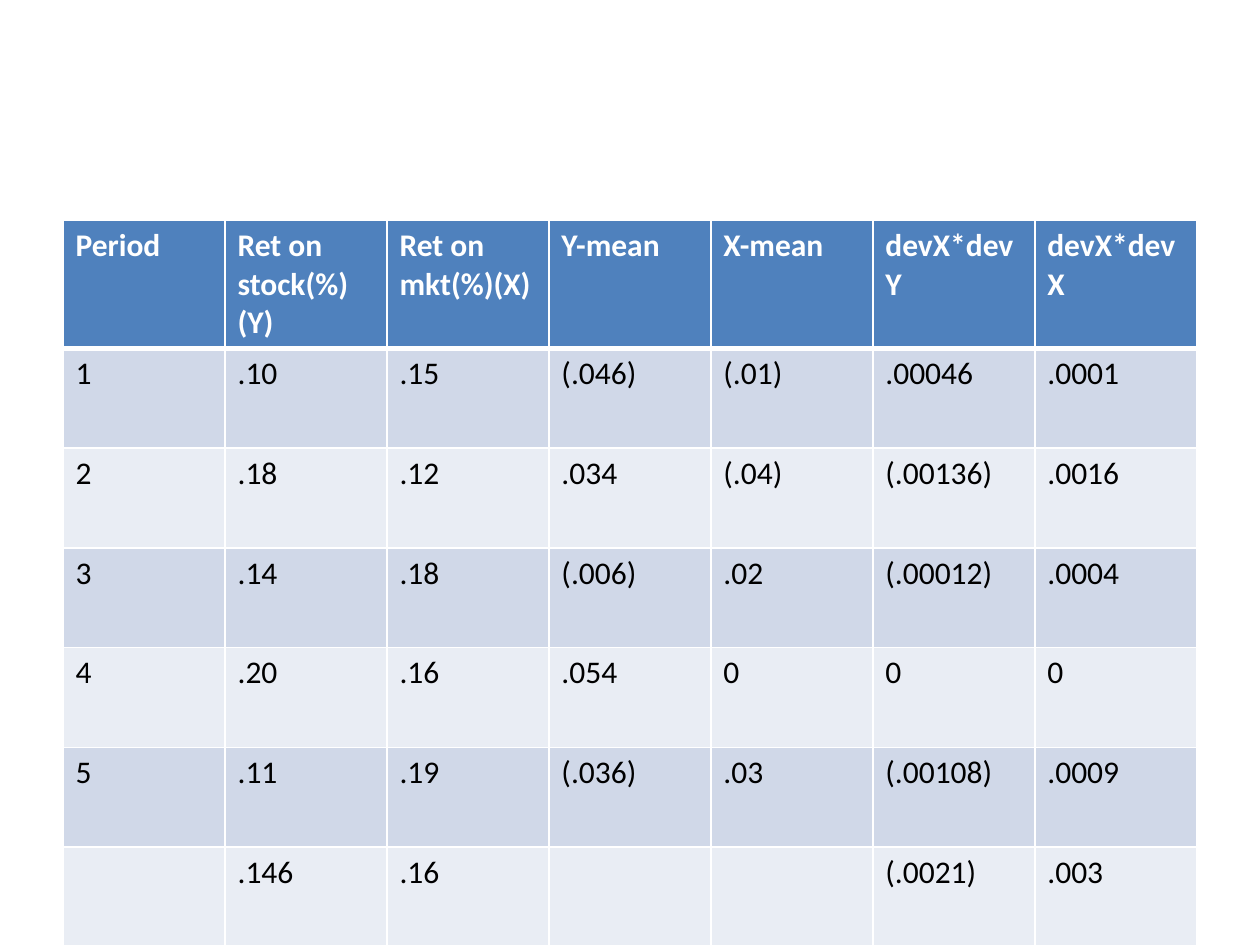
"""Build a slide with a table of stock and market return deviations."""
from lxml.etree import SubElement
from pptx import Presentation
from pptx.dml.color import RGBColor
from pptx.oxml.ns import qn
from pptx.util import Pt

WHITE = RGBColor(0xFF, 0xFF, 0xFF)
BLACK = RGBColor(0x00, 0x00, 0x00)
HEADER_BLUE = RGBColor(0x4F, 0x81, 0xBD)
BAND_DARK = RGBColor(0xD0, 0xD8, 0xE8)
BAND_LIGHT = RGBColor(0xE9, 0xED, 0xF4)

HEADINGS = ["Period", "Ret on stock(%)(Y)", "Ret on mkt(%)(X)", "Y-mean",
            "X-mean", "devX*devY", "devX*devX"]
RETURNS = [
    ["1", ".10", ".15", "(.046)", "(.01)", ".00046", ".0001"],
    ["2", ".18", ".12", ".034", "(.04)", "(.00136)", ".0016"],
    ["3", ".14", ".18", "(.006)", ".02", "(.00012)", ".0004"],
    ["4", ".20", ".16", ".054", "0", "0", "0"],
    ["5", ".11", ".19", "(.036)", ".03", "(.00108)", ".0009"],
    ["", ".146", ".16", "", "", "(.0021)", ".003"],
]


class SlideBuilder:
    """Hold the text style and the current slide."""

    header_format = {"name": "Calibri", "size": Pt(18), "bold": True}
    body_format = {**header_format, "bold": False}

    def __init__(self, slide):
        self.slide = slide

    def borders(self, cell, widths):
        """Draw white cell borders with the given widths in points."""
        properties = cell._tc.get_or_add_tcPr()
        for side, width in widths.items():
            border = SubElement(properties, qn(f"a:ln{side}"), w=str(Pt(width)))
            fill = SubElement(border, qn("a:solidFill"))
            SubElement(fill, qn("a:srgbClr"), val=str(WHITE))

    def cell(self, cell, text, text_format, color, background):
        """Fill one cell and style its text."""
        cell.text = text
        cell.fill.solid()
        cell.fill.fore_color.rgb = background
        paragraph = cell.text_frame.paragraphs[0]
        for font in [paragraph.font, *(run.font for run in paragraph.runs)]:
            for attribute, value in text_format.items():
                setattr(font, attribute, value)
            font.color.rgb = color

    def table(self, rows, left, top, width, header_height, row_height):
        """Add a table with a header row and banded body rows."""
        height = header_height + row_height * (len(rows) - 1)
        table = self.slide.shapes.add_table(
            len(rows), len(rows[0]), Pt(left), Pt(top), Pt(width), Pt(height)).table
        for column in table.columns:
            column.width = Pt(width / len(rows[0]))
        for r, texts in enumerate(rows):
            header = r == 0
            table.rows[r].height = Pt(header_height if header else row_height)
            text_format = self.header_format if header else self.body_format
            color = WHITE if header else BLACK
            band = BAND_DARK if r % 2 else BAND_LIGHT
            background = HEADER_BLUE if header else band
            widths = {"L": 1, "R": 1, "T": 3 if r == 1 else 1, "B": 3 if header else 1}
            for c, text in enumerate(texts):
                self.borders(table.cell(r, c), widths)
                self.cell(table.cell(r, c), text, text_format, color, background)


def main():
    """Build and save the presentation."""
    presentation = Presentation()
    presentation.slide_width, presentation.slide_height = Pt(720), Pt(540)
    slide = presentation.slides.add_slide(presentation.slide_layouts[6])
    builder = SlideBuilder(slide)
    builder.table([HEADINGS, *RETURNS], left=36, top=126, width=648,
                  header_height=72, row_height=57)
    presentation.save("out.pptx")


if __name__ == "__main__":
    main()
